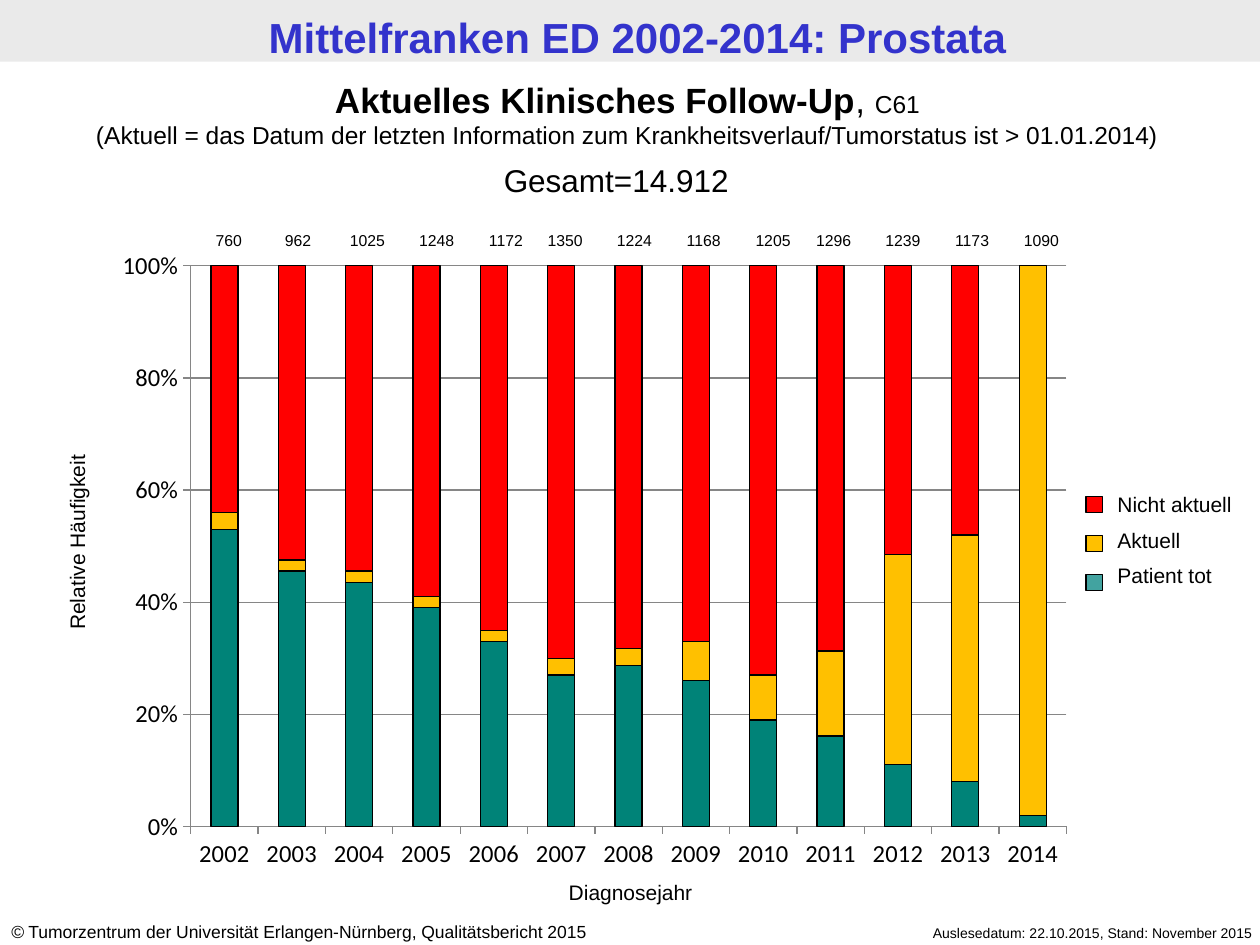
from lxml import etree
from pptx import Presentation
from pptx.chart.data import CategoryChartData
from pptx.dml.color import RGBColor
from pptx.enum.chart import XL_CHART_TYPE as CT, XL_TICK_MARK as TICK
from pptx.enum.shapes import MSO_SHAPE
from pptx.enum.text import PP_ALIGN as AL
from pptx.oxml import parse_xml
from pptx.oxml.ns import nsdecls, qn
from pptx.util import Inches, Pt


def rgb(value):
    return RGBColor.from_string(value)


def add_text(left, top, width, height, paragraphs, align=AL.LEFT, before=0):
    """Each paragraph is a list of (text, size, style); style is a dict of font settings."""
    box = s.shapes.add_textbox(Inches(left), Inches(top), Inches(width), Inches(height))
    tf = box.text_frame
    tf.word_wrap = True
    for i, runs in enumerate(paragraphs):
        p = tf.paragraphs[0] if i == 0 else tf.add_paragraph()
        p.alignment = align
        if i and before:
            p.space_before = Pt(before)
        for text, size, style in runs:
            r = p.add_run()
            r.text = text
            r.font.name = "Arial"
            r.font.size = Pt(size)
            r.font.bold = style.get("bold", False)
            r.font.italic = style.get("italic", False)
            r.font.color.rgb = rgb(style.get("color", "000000"))
    return box


prs = Presentation()
prs.slide_width, prs.slide_height = Inches(10), Inches(7.5)
s = prs.slides.add_slide(prs.slide_layouts[6])

# Header band and footer
band = s.shapes.add_shape(MSO_SHAPE.RECTANGLE, 0, 0, Inches(10), Inches(0.49))
band.shadow.inherit = False
band.fill.solid()
band.fill.fore_color.rgb = rgb("EAEAEA")
band.line.fill.background()
add_text(0.06, 0.04, 10, 0.49,
         [[("Mittelfranken ED 2002-2014: Prostata", 24, {"bold": True, "color": "3333CC"})]],
         AL.CENTER)
add_text(6.65, 7.29, 3.39, 0.24,
         [[("Auslesedatum: 22.10.2015, Stand: November 2015", 8, {})]], AL.RIGHT)
add_text(-0.01, 7.26, 5.24, 0.27,
         [[("©", 10, {"italic": True}),
           (" Tumorzentrum der Universität Erlangen-Nürnberg, Qualitätsbericht 2015", 10, {})]])

# Stacked chart of follow-up status by year of diagnosis
years = range(2002, 2015)
status_series = [
    ("Patient tot", "008378", (53, 46, 44, 39, 33, 27, 29, 26, 19, 16, 11, 8, 2)),
    ("Aktuell", "FFC000", (3, 2, 2, 2, 2, 3, 3, 7, 8, 15, 37, 44, 98)),
    ("Nicht aktuell", "FF0000", (44, 53, 55, 59, 65, 70, 69, 67, 73, 68, 51, 48, 0)),
]
data = CategoryChartData()
data.categories = [str(year) for year in years]
for name, _, values in status_series:
    data.add_series(name, values)
chart = s.shapes.add_chart(CT.COLUMN_STACKED_100, Inches(0.82), Inches(1.89),
                           Inches(7.8), Inches(5.11), data).chart
chart.has_legend = False
chart.has_title = False
chart.font.name = "Calibri"
chart.font.size = Pt(14)
chart.font.color.rgb = rgb("000000")

plot = chart.plots[0]
plot.gap_width, plot.overlap = 150, 100
plot.vary_by_categories = False
for series, (_, color, _) in zip(plot.series, status_series):
    series.format.fill.solid()
    series.format.fill.fore_color.rgb = rgb(color)
    series.format.line.color.rgb = rgb("000000")
    series.format.line.width = Pt(0.75)

value_axis = chart.value_axis
value_axis.minimum_scale, value_axis.maximum_scale, value_axis.major_unit = 0, 1, 0.2
value_axis.tick_labels.number_format = "0%"
value_axis.tick_labels.number_format_is_linked = False
value_axis.has_major_gridlines = True
for axis in (chart.category_axis, value_axis):
    axis.major_tick_mark = TICK.OUTSIDE
    axis.tick_labels.font.size = Pt(14)
for line in (chart.category_axis.format.line, value_axis.format.line,
             value_axis.major_gridlines.format.line):
    line.color.rgb = rgb("868686")
    line.width = Pt(0.75)

# Fixed inner plot area, so the bars line up with the counts above them
plot_area = plot_area_layout = chart.element.find(".//" + qn("c:plotArea"))
for old in plot_area.findall(qn("c:layout")):
    plot_area.remove(old)
plot_area.insert(0, parse_xml(
    f'<c:layout {nsdecls("c")}><c:manualLayout><c:layoutTarget val="inner"/>'
    '<c:xMode val="edge"/><c:yMode val="edge"/><c:x val="0.089"/><c:y val="0.043"/>'
    '<c:w val="0.891"/><c:h val="0.871"/></c:manualLayout></c:layout>'))

# Axis titles
add_text(-0.59, 4.15, 2.41, 0.31, [[("Relative Häufigkeit", 12, {})]], AL.CENTER).rotation = 270
add_text(3.88, 6.93, 2.25, 0.31, [[("Diagnosejahr", 12, {})]], AL.CENTER)

# Case counts above the bars, in three evenly spaced groups
count_groups = [
    (1.54, (760, 962, 1025, 1248, 1172)),
    (4.21, (1350, 1224, 1168, 1205)),
    (6.34, (1296, 1239, 1173, 1090)),
]
for left, counts in count_groups:
    for i, count in enumerate(counts):
        add_text(left + 0.55 * i, 1.78, 0.55, 0.25, [[(str(count), 9, {})]], AL.CENTER)

# Legend
add_text(8.77, 3.85, 1.42, 0.91,
         [[(name, 12, {})] for name, _, _ in reversed(status_series)], before=6)
for top, color, alpha in ((3.94, "FF0000", 100), (4.25, "FFC000", 100), (4.56, "008380", 74)):
    sp = s.shapes.add_shape(MSO_SHAPE.RECTANGLE, Inches(8.62), Inches(top),
                            Inches(0.13), Inches(0.13))
    sp.shadow.inherit = False
    sp.fill.solid()
    sp.fill.fore_color.rgb = rgb(color)
    sp.line.color.rgb = rgb("000000")
    sp.line.width = Pt(0.75)
    if alpha < 100:
        fill_color = sp.element.spPr.find(qn("a:solidFill")).find(qn("a:srgbClr"))
        etree.SubElement(fill_color, qn("a:alpha")).set("val", str(alpha * 1000))

# Subtitle and total
add_text(-0.04, 0.57, 10.04, 0.67,
         [[("Aktuelles Klinisches Follow-Up", 20, {"bold": True}), (", ", 20, {}), ("C61", 14, {})],
          [("(Aktuell = das Datum der letzten Information zum Krankheitsverlauf/Tumorstatus "
            "ist > 01.01.2014)", 14, {})]], AL.CENTER)
add_text(3.9, 1.23, 2.2, 0.4, [[("Gesamt=14.912", 18, {})]])

prs.save("out.pptx")
